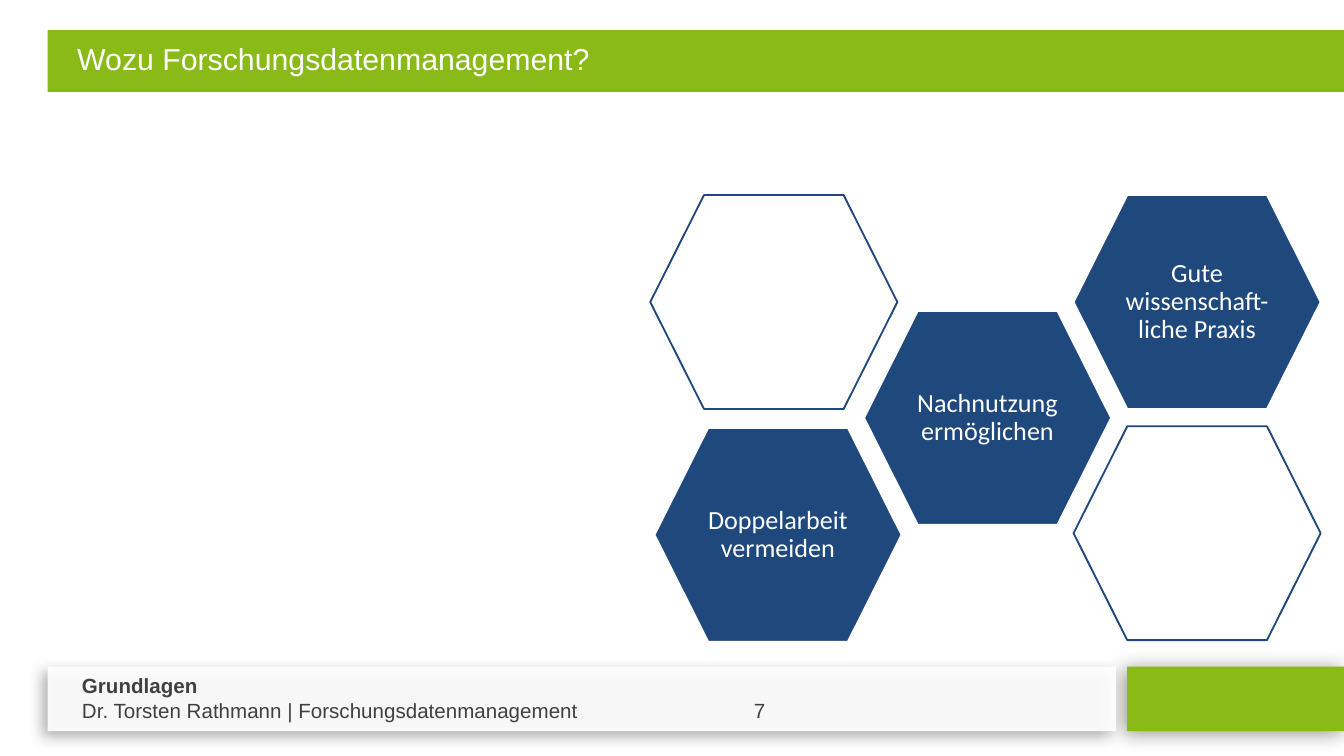
import lxml.etree
import pptx
import pptx.dml.color
import pptx.enum.shapes
import pptx.enum.text
import pptx.oxml
import pptx.oxml.ns
import pptx.util

Cm = pptx.util.Cm
Pt = pptx.util.Pt
Shapes = pptx.enum.shapes.MSO_SHAPE
Align = pptx.enum.text.PP_ALIGN
Anchor = pptx.enum.text.MSO_ANCHOR
qn = pptx.oxml.ns.qn

COLOURS = {"green": "89BA17", "navy": "1F497D", "white": "FFFFFF", "grey": "404040", "black": "000000"}
FORMATS = {
    "title": {"name": "Arial", "size": Pt(16.2)},
    "footer": {"name": "Arial", "size": Pt(11)},
    "hexagon": {"name": "Calibri", "size": Pt(14)},
}


def apply(target, values):
    for attribute, value in values.items():
        setattr(target, attribute, value)


class SlideBuilder:
    def __init__(self, slide):
        self.slide = slide

    def rgb(self, colour):
        return pptx.dml.color.RGBColor.from_string(COLOURS[colour])

    def shape(self, kind, box, fill=None, line=None):
        shape = self.slide.shapes.add_shape(kind, *map(Cm, box))
        shape.shadow.inherit = False
        for part, colour in ((shape.fill, fill), (shape.line.fill, line)):
            if colour:
                part.solid()
                part.fore_color.rgb = self.rgb(colour)
            else:
                part.background()
        if line:
            shape.line.width = Pt(1)
        return shape

    def bar(self, box, fill, opacity=100, shadow=None):
        bar = self.shape(Shapes.RECTANGLE, box, fill)
        properties = bar._element.spPr
        if opacity < 100:
            self.alpha(properties.find(".//" + qn("a:srgbClr")), opacity)
        if shadow:
            strength, blur, distance, angle = shadow
            outer = lxml.etree.SubElement(
                properties.find(qn("a:effectLst")), qn("a:outerShdw"),
                blurRad=str(Pt(blur)), dist=str(Pt(distance)),
                dir=str(angle * 60000), algn="ctr", rotWithShape="0")
            colour = lxml.etree.SubElement(outer, qn("a:srgbClr"), val=COLOURS["black"])
            self.alpha(colour, strength)

    def alpha(self, colour, percent):
        lxml.etree.SubElement(colour, qn("a:alpha"), val=str(percent * 1000))

    def fill_text(self, frame, lines, style, colour, **paragraph_format):
        frame.word_wrap = True
        for index, line in enumerate(lines):
            paragraph = frame.add_paragraph() if index else frame.paragraphs[0]
            apply(paragraph, paragraph_format)
            run = paragraph.add_run()
            run.text = line
            apply(run.font, FORMATS[style])
            run.font.color.rgb = self.rgb(colour)
        return frame.paragraphs

    def text(self, box, lines, style, colour, **frame_format):
        frame = self.slide.shapes.add_textbox(*map(Cm, box)).text_frame
        apply(frame, frame_format)
        return self.fill_text(frame, lines, style, colour)

    def tabs(self, paragraph, stops):
        tab_list = lxml.etree.SubElement(paragraph._p.get_or_add_pPr(), qn("a:tabLst"))
        for stop in stops:
            lxml.etree.SubElement(tab_list, qn("a:tab"), pos=str(Cm(stop)), algn="l")

    def hexagon(self, left, top, lines):
        fill, line = ("navy", "white") if lines else (None, "navy")
        hexagon = self.shape(Shapes.HEXAGON, (left, top, 4.67, 4.06), fill, line)
        hexagon.adjustments[0] = 0.25
        hexagon.adjustments[1] = 1.15
        if lines:
            frame = hexagon.text_frame
            sides = ("left", "top", "right", "bottom")
            apply(frame, {f"margin_{side}": Cm(0.2) for side in sides})
            frame.vertical_anchor = Anchor.MIDDLE
            self.fill_text(frame, lines, "hexagon", "white", alignment=Align.CENTER, line_spacing=0.9)


def main():
    deck = pptx.Presentation()
    apply(deck, {"slide_width": Cm(25.4), "slide_height": Cm(14.29)})
    builder = SlideBuilder(deck.slides.add_slide(deck.slide_layouts[6]))

    builder.bar((21.3, 12.6, 4.1, 1.22), "green", shadow=(42, 10.8, 2, 142))
    builder.bar((0.9, 12.6, 20.19, 1.22), "white", 91, shadow=(34, 7.5, 4, 145))
    footer = builder.text(
        (1.3, 12.6, 15.19, 1.2),
        ["Grundlagen", "Dr. Torsten Rathmann | Forschungsdatenmanagement\t\t\t7"],
        "footer", "grey")
    footer[0].runs[0].font.bold = True
    builder.tabs(footer[1], (10.7, 11.7, 12.7))

    builder.bar((0.9, 0.57, 24.6, 1.17), "green")
    builder.text((0.9, 0.57, 24.6, 0.9), ["Wozu Forschungsdatenmanagement?"],
                 "title", "white", margin_left=Cm(0.56), margin_top=Cm(0.2))

    for left, top, reason in (
        (12.37, 8.08, ["Doppelarbeit", "vermeiden"]),
        (12.29, 3.68, []),
        (16.33, 5.87, ["Nachnutzung ermöglichen"]),
        (20.29, 3.68, ["Gute wissenschaft-liche Praxis"]),
        (20.29, 8.05, []),
    ):
        builder.hexagon(left, top, reason)

    deck.save("out.pptx")


if __name__ == "__main__":
    main()
